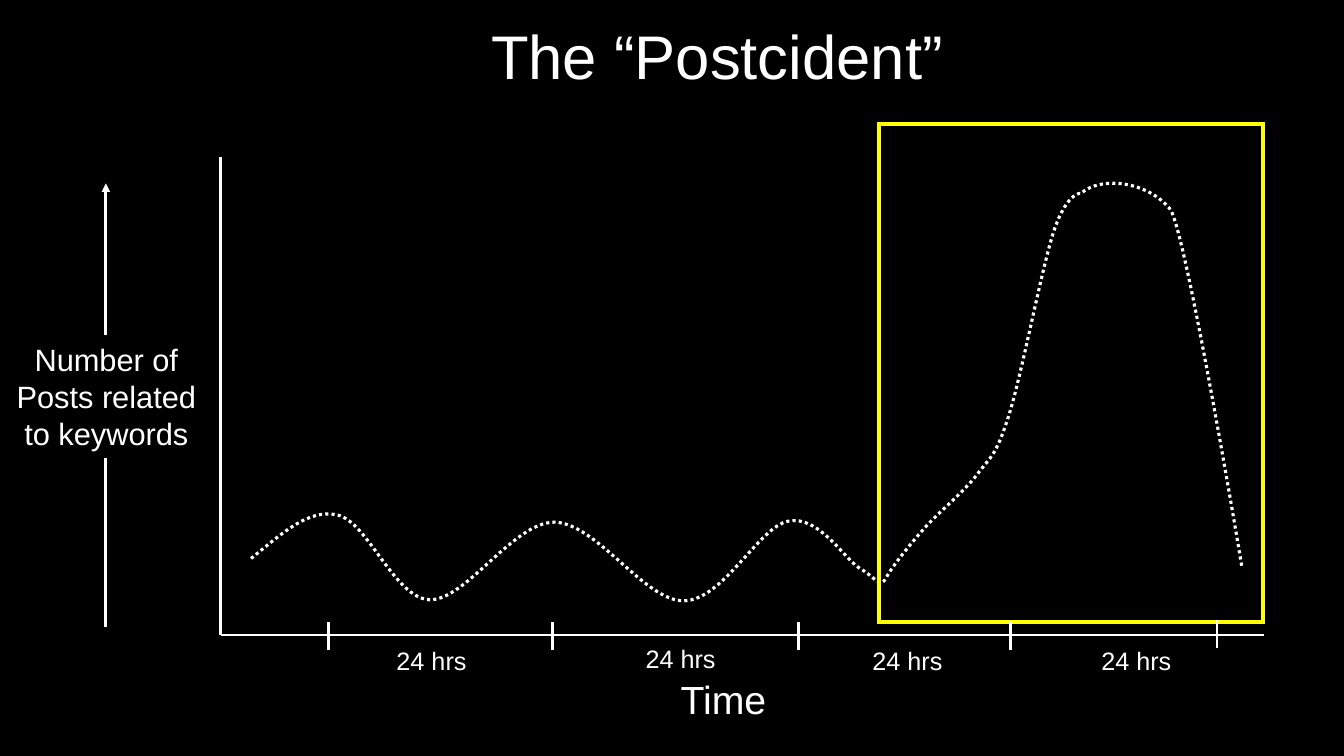
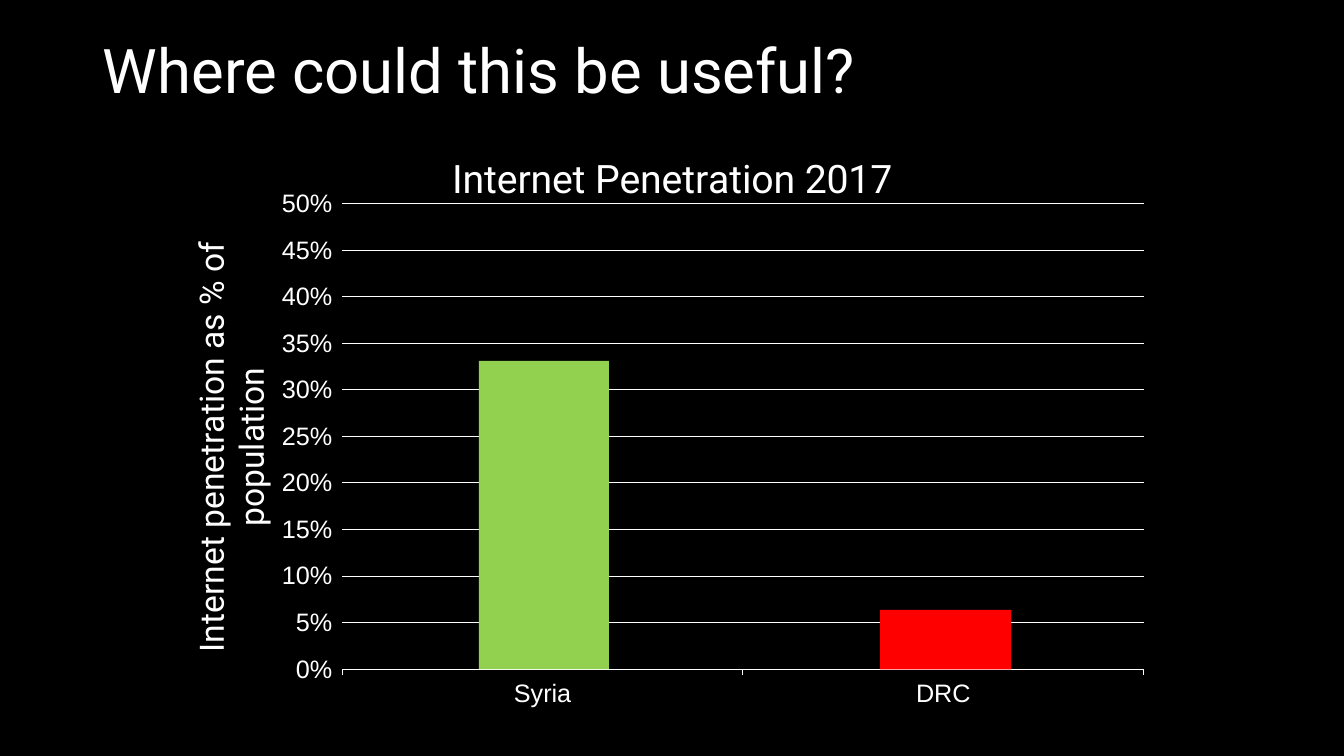
from dataclasses import dataclass

from lxml import etree
from pptx import Presentation
from pptx.chart.data import CategoryChartData
from pptx.dml.color import RGBColor
from pptx.enum.chart import XL_CHART_TYPE, XL_TICK_MARK
from pptx.enum.dml import MSO_LINE
from pptx.enum.shapes import MSO_CONNECTOR, MSO_SHAPE
from pptx.enum.text import MSO_ANCHOR, MSO_AUTO_SIZE, PP_ALIGN
from pptx.oxml.ns import qn
from pptx.util import Inches, Pt

CENTER, LEFT = PP_ALIGN.CENTER, PP_ALIGN.LEFT
MIDDLE = MSO_ANCHOR.MIDDLE
NO_FIT = MSO_AUTO_SIZE.NONE
STRAIGHT = MSO_CONNECTOR.STRAIGHT
RECTANGLE = MSO_SHAPE.RECTANGLE
DOTTED = MSO_LINE.ROUND_DOT
COLUMNS = XL_CHART_TYPE.COLUMN_CLUSTERED
OUTSIDE = XL_TICK_MARK.OUTSIDE


@dataclass(frozen=True)
class Theme:
    black = RGBColor(0x00, 0x00, 0x00)
    white = RGBColor(0xFF, 0xFF, 0xFF)
    yellow = RGBColor(0xFF, 0xFF, 0x00)
    green = RGBColor(0x92, 0xD0, 0x50)
    red = RGBColor(0xFF, 0x00, 0x00)
    plain = "Arial"
    display = "Roboto"
    title = 44
    heading = 28
    axis_title = 24
    label = 22
    tick = 18
    rule = 2
    grid = 0.75


theme = Theme()


def write(sp, box, lines, size, font=theme.plain, align=CENTER, inset=0.06):
    """Place a text shape and set its lines in one white style."""
    sp.left, sp.top, sp.width, sp.height = [Inches(v) for v in box]
    tf = sp.text_frame
    tf.text = "\n".join(lines)
    tf.word_wrap, tf.auto_size, tf.vertical_anchor = True, NO_FIT, MIDDLE
    tf.margin_left = tf.margin_right = Inches(inset)
    tf.margin_top = tf.margin_bottom = Inches(0.05)
    for p in tf.paragraphs:
        p.alignment = align
        p.font.name, p.font.size, p.font.color.rgb = font, Pt(size), theme.white


def draw_line(s, x1, y1, x2, y2):
    """Draw a plain white rule and return it."""
    line = s.shapes.add_connector(STRAIGHT, *[Inches(v) for v in (x1, y1, x2, y2)])
    line.line.color.rgb, line.line.width = theme.white, Pt(theme.rule)
    etree.SubElement(line._element.spPr, qn("a:effectLst"))
    return line


prs = Presentation()
prs.slide_width, prs.slide_height = Inches(13.33), Inches(7.5)
background = prs.slide_master.background.fill
background.solid()
background.fore_color.rgb = theme.black
title_only = prs.slide_layouts[5]

# Slide 1: message volume over time
s = prs.slides.add_slide(title_only)
write(s.shapes.title, (4.69, 0.12, 4.85, 0.85), ["The “Postcident”"], theme.title)

# Axes and day ticks
axis_x, axis_y, axis_end = 2.19, 6.3, 12.54
draw_line(s, axis_x, 1.56, axis_x, axis_y)
draw_line(s, axis_x, axis_y, axis_end, axis_y)

# Dotted volume curve: each row is two control points and an end point
curve_start = (2.49, 5.54)
curve = [
    (2.79, 5.3, 3.06, 5.04, 3.35, 5.11),
    (3.65, 5.18, 3.91, 5.93, 4.26, 5.95),
    (4.62, 5.96, 5.09, 5.18, 5.5, 5.18),
    (5.92, 5.19, 6.39, 5.96, 6.78, 5.96),
    (7.17, 5.96, 7.53, 5.22, 7.82, 5.17),
    (8.12, 5.11, 8.37, 5.54, 8.53, 5.64),
    (8.69, 5.73, 8.73, 5.85, 8.79, 5.73),
    (8.85, 5.62, 9.01, 5.42, 9.16, 5.25),
    (9.31, 5.08, 9.55, 4.89, 9.69, 4.71),
    (9.83, 4.52, 9.87, 4.54, 10, 4.14),
    (10.13, 3.74, 10.33, 2.67, 10.45, 2.3),
    (10.57, 1.93, 10.71, 1.91, 10.72, 1.92),
    (10.92, 1.74, 11.39, 1.8, 11.61, 2.08),
    (11.77, 2.34, 12.32, 5.63, 12.32, 5.64),
]
points = [(Inches(row[i]), Inches(row[i + 1])) for row in curve for i in (0, 2, 4)]
builder = s.shapes.build_freeform(*[Inches(v) for v in curve_start])
builder.add_line_segments(points, close=False)
sp = builder.convert_to_shape()

# Turn every three straight segments into one cubic curve
segments = list(sp._element.iter(qn("a:lnTo")))
for i in range(0, len(segments), 3):
    bezier = etree.Element(qn("a:cubicBezTo"))
    segments[i].addprevious(bezier)
    for segment in segments[i:i + 3]:
        bezier.append(segment[0])
        segment.getparent().remove(segment)
sp.shadow.inherit = False
sp.fill.background()
sp.line.color.rgb, sp.line.width = theme.white, Pt(2.25)
sp.line.dash_style = DOTTED

# Upward arrow, interrupted by the vertical label
draw_line(s, 1.05, 6.22, 1.05, 4.54)
arrow = draw_line(s, 1.05, 3.32, 1.05, 1.82)
etree.SubElement(arrow._element.spPr.find(qn("a:ln")), qn("a:tailEnd"), type="triangle")

# Axis labels
write(s.shapes.add_textbox(0, 0, 0, 0), (0, 3.32, 2.11, 1.22),
      ["Number of", "Posts related", "to keywords"], theme.label)
write(s.shapes.add_textbox(0, 0, 0, 0), (4.75, 6.64, 4.85, 0.58), ["Time"], theme.heading)
for center, top in ((4.28, 6.34), (6.75, 6.32), (9, 6.34), (11.27, 6.34)):
    write(s.shapes.add_textbox(0, 0, 0, 0), (center - 0.75, top, 1.5, 0.42),
          ["24 hrs"], theme.tick)

# Highlighted peak
sp = s.shapes.add_shape(RECTANGLE, *[Inches(v) for v in (8.72, 1.23, 3.81, 4.94)])
sp.shadow.inherit = False
sp.fill.background()
sp.line.color.rgb, sp.line.width = theme.yellow, Pt(3)
etree.SubElement(sp._element.spPr.find(qn("a:ln")), qn("a:miter"), lim="800000")

# Day ticks, in front of the highlight
for x, top in ((3.26, 6.17), (5.48, 6.17), (7.92, 6.17), (10.02, 6.17), (12.07, 6.15)):
    draw_line(s, x, top, x, top + 0.28)

# Slide 2: internet penetration chart
s = prs.slides.add_slide(title_only)
write(s.shapes.title, (0.92, 0, 11.5, 1.45), ["Where could this be useful?"],
      theme.title, theme.display, LEFT, 0.1)
s.shapes.title.text_frame.paragraphs[0].line_spacing = 0.9

data = CategoryChartData(number_format="0%")
data.categories = ["Syria", "DRC"]
data.add_series("Series 1", (0.33, 0.06))
frame = s.shapes.add_chart(COLUMNS, *[Inches(v) for v in (1.7, 1.24, 9.8, 5.92)], data)
chart = frame.chart
chart.has_legend = False
chart.font.name, chart.font.size = theme.plain, Pt(theme.tick)
chart.font.color.rgb = theme.white

# Unfilled columns, shown by the coloured bars in front
plot = chart.plots[0]
plot.gap_width, plot.overlap, plot.vary_by_categories = 219, -27, False
plot.series[0].format.fill.background()

# Axes
countries, percent = chart.category_axis, chart.value_axis
countries.major_tick_mark = percent.major_tick_mark = OUTSIDE
percent.minimum_scale, percent.maximum_scale, percent.major_unit = 0, 0.5, 0.05
percent.tick_labels.number_format = "0%"
percent.tick_labels.number_format_is_linked = False
percent.format.line.fill.background()
for line in (countries.format.line, percent.major_gridlines.format.line):
    line.color.rgb, line.width = theme.white, Pt(theme.grid)

# Chart and axis titles
chart.has_title = percent.has_title = True
for title, text, size in (
    (chart.chart_title, "Internet Penetration 2017", theme.heading),
    (percent.axis_title, "Internet penetration as % of population", theme.axis_title),
):
    p = title.text_frame.paragraphs[0]
    p.text = text
    p.font.name, p.font.size, p.font.bold = theme.display, Pt(size), False
    p.font.color.rgb = theme.white
chart.chart_title.include_in_layout = False

# Fixed places of the plot area and the titles, as fractions of the chart
plot_area = plot._element.getparent()
edges = {"xMode": "edge", "yMode": "edge"}
for parent, index, settings in (
    (plot_area, 0, {"layoutTarget": "inner", **edges,
                    "x": 0.173, "y": 0.132, "w": 0.811, "h": 0.78}),
    (chart.chart_title._element, 1, {**edges, "x": 0.277, "y": 0.035}),
    (percent.axis_title._element, 1, {**edges, "x": 0.011, "y": 0.186}),
):
    for old in parent.findall(qn("c:layout")):
        parent.remove(old)
    layout = etree.Element(qn("c:layout"))
    manual = etree.SubElement(layout, qn("c:manualLayout"))
    for tag, value in settings.items():
        etree.SubElement(manual, qn("c:" + tag), val=str(value))
    parent.insert(index, layout)

# Coloured bars, standing on the category axis
base = 6.64
for left, width, height, color in ((4.75, 1.29, 3.06, theme.green),
                                   (8.73, 1.3, 0.59, theme.red)):
    sp = s.shapes.add_shape(RECTANGLE, Inches(left), Inches(base - height),
                            Inches(width), Inches(height))
    sp.shadow.inherit = False
    sp.fill.solid()
    sp.fill.fore_color.rgb = color
    sp.line.fill.background()

prs.save("out.pptx")
